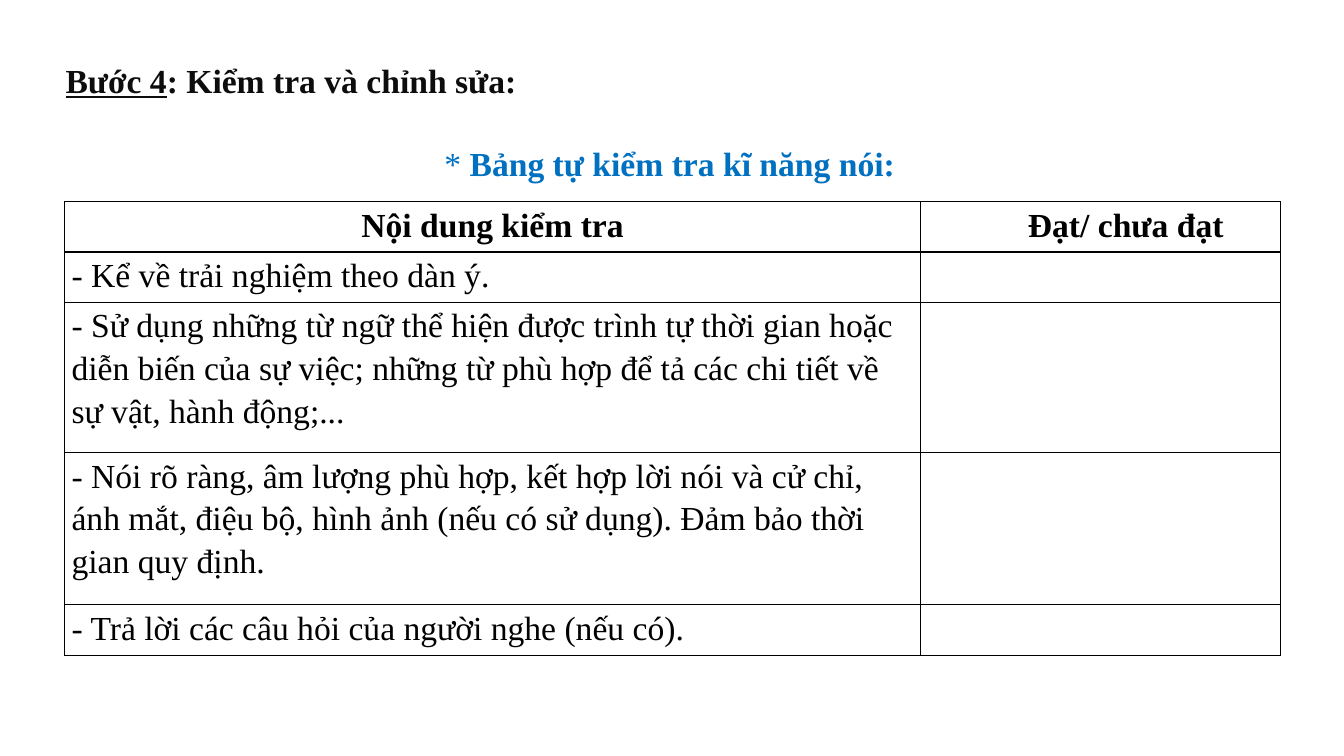
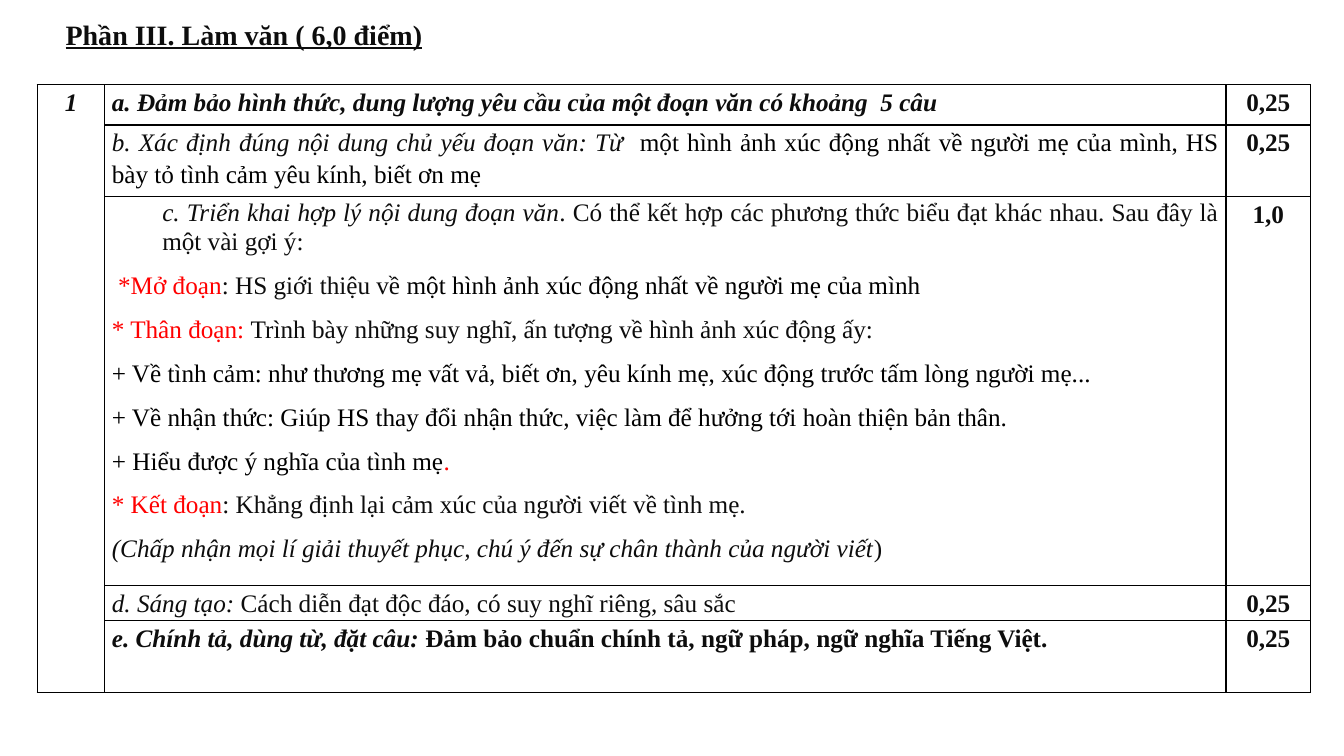
from lxml import etree
from pptx import Presentation, util as u
from pptx.dml.color import RGBColor
from pptx.enum import text
from pptx.oxml import ns

PX = 9144  # one hundredth of an inch
FONT = "Times New Roman"
BLACK = RGBColor(0x00, 0x00, 0x00)
INK = RGBColor(0x0D, 0x0D, 0x0D)
BLUE = RGBColor(0x00, 0x70, 0xC0)
RED = RGBColor(0xFF, 0x00, 0x00)
LEFT, CENTER, JUSTIFY = (text.PP_ALIGN.LEFT, text.PP_ALIGN.CENTER,
                         text.PP_ALIGN.JUSTIFY)
BOLD = {"bold": True}
ITALIC = {"italic": True}
IN_RED = {"color": RED}
IN_BLACK = {"color": BLACK}


def write(paragraph, runs, size=18, color=INK, bold=False, italic=False,
          underline=False, align=LEFT, spacing=1.15, after=10, indent=0):
    """Write a string, or (string, format overrides) pairs, into a paragraph."""
    paragraph.alignment = align
    paragraph.line_spacing = spacing
    paragraph.space_before = u.Pt(0)
    paragraph.space_after = u.Pt(after)
    if indent:
        properties = paragraph._p.get_or_add_pPr()
        properties.set("marL", str(indent * PX))
        properties.set("indent", "0")
    for words, changes in [(runs, {})] if isinstance(runs, str) else runs:
        run = paragraph.add_run()
        run.text = words
        style = {"color": color, "bold": bold, "italic": italic,
                 "underline": underline} | changes
        run.font.name = FONT
        run.font.size = u.Pt(size)
        run.font.color.rgb = style["color"]
        run.font.bold = style["bold"]
        run.font.italic = style["italic"]
        run.font.underline = style["underline"]


def add_ruled_table(slide, left, top, widths, heights):
    """Add an unfilled table with black rules round every cell."""
    table = slide.shapes.add_table(
        len(heights), len(widths), left * PX, top * PX,
        sum(widths) * PX, sum(heights) * PX).table
    table.first_row = table.horz_banding = False
    for column, width in zip(table.columns, widths):
        column.width = width * PX
    for row, height in zip(table.rows, heights):
        row.height = height * PX
    for cell in table.iter_cells():
        cell.margin_left = cell.margin_right = 7 * PX
        cell.margin_top = cell.margin_bottom = 0
        properties = cell._tc.get_or_add_tcPr()
        for side in ("lnL", "lnR", "lnT", "lnB"):
            line = etree.SubElement(properties, ns.qn(f"a:{side}"), w="12700")
            fill = etree.SubElement(line, ns.qn("a:solidFill"))
            etree.SubElement(fill, ns.qn("a:srgbClr"), val=str(BLACK))
        cell.fill.background()
    return table


presentation = Presentation()
presentation.slide_width = u.Emu(1333 * PX)
presentation.slide_height = u.Emu(750 * PX)
title_only = presentation.slide_layouts[5]

# Titles: box, runs, format
titles = [
    ((55, 48, 472, 57),
     [("Bước 4", {"underline": True}), (": Kiểm tra và chỉnh sửa:", {})],
     {"size": 24}),
    ((55, 12, 377, 44), "Phần III. Làm văn ( 6,0 điểm)",
     {"size": 20, "underline": True, "spacing": 1.0, "after": 0}),
]
slides = []
for box, runs, style in titles:
    slide = presentation.slides.add_slide(title_only)
    title = slide.shapes.title
    title.left, title.top, title.width, title.height = [n * PX for n in box]
    frame = title.text_frame
    frame.word_wrap = False
    frame.auto_size = text.MSO_AUTO_SIZE.SHAPE_TO_FIT_TEXT
    frame.vertical_anchor = text.MSO_ANCHOR.TOP
    write(frame.paragraphs[0], runs, bold=True, **style)
    slides.append(slide)
checklist_slide, marking_slide = slides

# Slide 1: speaking checklist
caption = checklist_slide.shapes.add_textbox(
    *[n * PX for n in (431, 131, 471, 54)]).text_frame
caption.word_wrap = False
caption.auto_size = text.MSO_AUTO_SIZE.SHAPE_TO_FIT_TEXT
write(caption.paragraphs[0],
      [("* ", {}), ("Bảng tự kiểm tra kĩ năng nói:", BOLD)],
      size=24, color=BLUE)

checklist = add_ruled_table(checklist_slide, 64, 200, [849, 357],
                            [50, 50, 149, 151, 50])
for column, heading in enumerate(["Nội dung kiểm tra", "Đạt/ chưa đạt"]):
    write(checklist.cell(0, column).text_frame.paragraphs[0], heading,
          size=24, color=BLACK, bold=True, align=CENTER, after=0)
checklist.cell(0, 1).margin_left = 57 * PX

criteria = [
    "- Kể về trải nghiệm theo dàn ý.",
    "- Sử dụng những từ ngữ thể hiện được trình tự thời gian hoặc diễn biến "
    "của sự việc; những từ phù hợp để tả các chi tiết về sự vật, hành động;...",
    "- Nói rõ ràng, âm lượng phù hợp, kết hợp lời nói và cử chỉ, ánh mắt, "
    "điệu bộ, hình ảnh (nếu có sử dụng). Đảm bảo thời gian quy định.",
    "- Trả lời các câu hỏi của người nghe (nếu có).",
]
for row, criterion in enumerate(criteria, 1):
    write(checklist.cell(row, 0).text_frame.paragraphs[0], criterion,
          size=24, color=BLACK, after=0)

# Slide 2: marking guide
marking = add_ruled_table(marking_slide, 37, 84, [67, 1112, 84],
                          [40, 71, 372, 34, 71])
marking.cell(0, 0).merge(marking.cell(4, 0))
write(marking.cell(0, 0).text_frame.paragraphs[0], "1",
      bold=True, italic=True, align=CENTER)

outline = [
    [("c. Triển khai hợp lý nội dung đoạn văn", ITALIC),
     (". Có thể kết hợp các phương thức biểu đạt khác nhau. "
      "Sau đây là một vài gợi ý: ", {})],
    [(" *Mở đoạn", IN_RED), (": HS giới thiệu về ", {}),
     ("một hình ảnh xúc động nhất về người mẹ của mình", IN_BLACK)],
    [("* Thân đoạn: ", IN_RED),
     ("Trình bày những suy nghĩ, ấn tượng về hình ảnh xúc động ấy:", {})],
    [("+ Về tình cảm: như thương mẹ vất vả, biết ơn, yêu kính mẹ, "
      "xúc động trước tấm lòng người mẹ...", IN_BLACK)],
    [("+ Về nhận thức: Giúp HS thay đổi nhận thức, việc làm để hưởng tới "
      "hoàn thiện bản thân.", IN_BLACK)],
    [("+ Hiểu được ý nghĩa của tình mẹ", IN_BLACK), (".", IN_RED)],
    [("* Kết đoạn", IN_RED),
     (": Khẳng định lại cảm xúc của người viết về tình mẹ.", {})],
    [("(Chấp nhận mọi lí giải thuyết phục, chú ý đến sự chân thành "
      "của người viết", ITALIC), (")", {})],
]
# Rows: paragraphs, line spacing, score
marking_rows = [
    ([[("a. Đảm bảo hình thức, dung lượng yêu cầu của một đoạn văn "
        "có khoảng  5 câu", BOLD | ITALIC)]], 1.15, "0,25"),
    ([[("b. Xác định đúng nội dung chủ yếu đoạn văn: Từ  ", ITALIC),
       ("một hình ảnh xúc động nhất về người mẹ của mình, HS bày tỏ "
        "tình cảm yêu kính, biết ơn mẹ", IN_BLACK)]], 1.15, "0,25"),
    (outline, 1.07, "1,0"),
    ([[("d. Sáng tạo: ", ITALIC),
       ("Cách diễn đạt độc đáo, có suy nghĩ riêng, sâu sắc", {})]],
     1.15, "0,25"),
    ([[("e. Chính tả, dùng từ, đặt câu: ", BOLD | ITALIC),
       ("Đảm bảo chuẩn chính tả, ngữ pháp, ngữ nghĩa Tiếng Việt.", BOLD)]],
     1.15, "0,25"),
]
for row, (paragraphs, spacing, score) in enumerate(marking_rows):
    frame = marking.cell(row, 1).text_frame
    for number, runs in enumerate(paragraphs):
        paragraph = frame.add_paragraph() if number else frame.paragraphs[0]
        indent = 50 if paragraphs is outline and number == 0 else 0
        write(paragraph, runs, align=JUSTIFY, spacing=spacing, indent=indent)
    write(marking.cell(row, 2).text_frame.paragraphs[0], score,
          bold=True, align=CENTER)

presentation.save("out.pptx")
